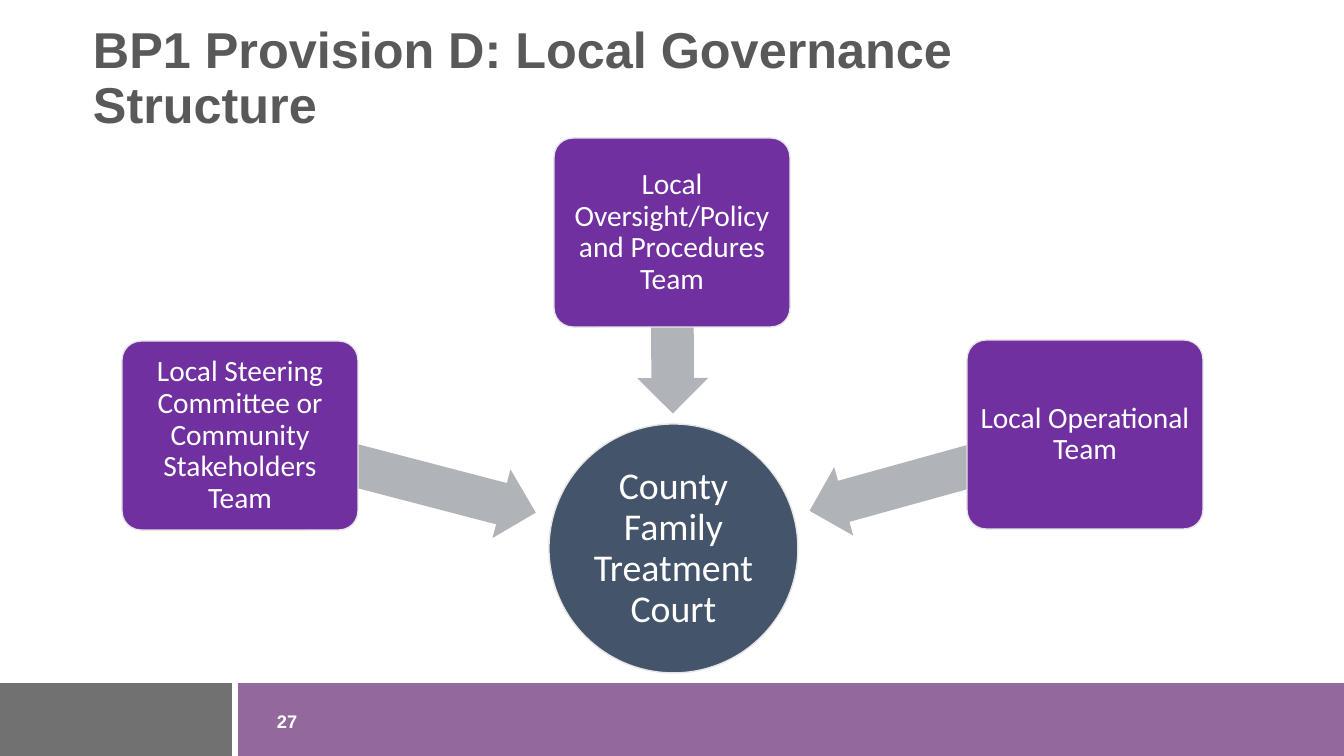
from math import atan2, cos, degrees, hypot, sin

from pptx import Presentation
from pptx.dml.color import RGBColor
from pptx.enum.shapes import MSO_CONNECTOR, MSO_SHAPE as SHAPE
from pptx.enum.text import MSO_ANCHOR as ANCHOR, MSO_AUTO_SIZE, PP_ALIGN as ALIGN
from pptx.oxml.ns import qn
from pptx.util import Emu, Pt
from lxml import etree

TITLE = "BP1 Provision D: Local Governance Structure"
PAGE = "27"
HUB = ("County Family Treatment Court", 549, 424, 249)
TEAMS = [
    ("Local Steering Committee or Community Stakeholders Team", 122, 341),
    ("Local Oversight/Policy and Procedures Team", 554, 138),
    ("Local Operational Team", 967, 340),
]
BOX_W, BOX_H, ARROW_H = 236, 189, 71
REACH = 0.945
SLIDE_W, SLIDE_H = 1344, 756
FOOTER_TOP, FOOTER_SPLIT = 683, 235
WHITE, GREY, EDGE = "FFFFFF", "595959", "E7E6E6"
PURPLE, NAVY, ARROW = "7030A0", "44546A", "B0B4B9"


def px(n):
    return Emu(round(n * 914400 / 100.8))


def rgb(color):
    return RGBColor.from_string(color)


def add_shape(slide, kind, x, y, w, h, fill, line=None, alpha=None):
    s = slide.shapes.add_shape(kind, px(x), px(y), px(w), px(h))
    s.shadow.inherit = False
    s.fill.solid()
    s.fill.fore_color.rgb = rgb(fill)
    if line:
        s.line.color.rgb = rgb(line)
        s.line.width = Pt(1)
    else:
        s.line.fill.background()
    if alpha:
        color = s.fill._xPr.find(".//" + qn("a:srgbClr"))
        etree.SubElement(color, qn("a:alpha"), val=str(alpha * 1000))
    return s


def write(s, text, size, font, color, bold=False, align=ALIGN.LEFT,
          anchor=ANCHOR.MIDDLE, inset=0):
    tf = s.text_frame
    tf.word_wrap = True
    tf.auto_size = MSO_AUTO_SIZE.NONE
    tf.vertical_anchor = anchor
    tf.margin_left = tf.margin_right = tf.margin_top = tf.margin_bottom = px(inset)
    tf.text = text
    p = tf.paragraphs[0]
    p.alignment = align
    p.line_spacing = 0.9
    p.font.size = Pt(size)
    p.font.name = font
    p.font.bold = bold
    p.font.color.rgb = rgb(color)


def add_footer(slide):
    height = SLIDE_H - FOOTER_TOP
    add_shape(slide, SHAPE.RECTANGLE, FOOTER_SPLIT, FOOTER_TOP,
              SLIDE_W - FOOTER_SPLIT, height, "4B055D", alpha=60)
    add_shape(slide, SHAPE.RECTANGLE, 0, FOOTER_TOP, FOOTER_SPLIT, height,
              "262626", alpha=65)
    number = slide.shapes.add_textbox(px(277), px(713), px(44), px(26))
    write(number, PAGE, 13, "Arial", WHITE, bold=True, anchor=ANCHOR.TOP)
    divider = slide.shapes.add_connector(
        MSO_CONNECTOR.STRAIGHT, px(FOOTER_SPLIT), px(FOOTER_TOP),
        px(FOOTER_SPLIT), px(SLIDE_H))
    divider.line.color.rgb = rgb(WHITE)
    divider.line.width = Pt(4)
    etree.SubElement(divider._element.spPr, qn("a:effectLst"))


def add_team(slide, text, x, y, hub_x, hub_y, radius):
    box_x, box_y = x + BOX_W / 2, y + BOX_H / 2
    dx, dy = box_x - hub_x, box_y - hub_y
    angle = atan2(dy, dx)
    length = REACH * (hypot(dx, dy) - radius)
    mid_x = box_x - cos(angle) * length / 2
    mid_y = box_y - sin(angle) * length / 2
    arrow = add_shape(slide, SHAPE.LEFT_ARROW, mid_x - length / 2,
                      mid_y - ARROW_H / 2, length, ARROW_H, ARROW)
    arrow.adjustments[0] = 0.6
    arrow.adjustments[1] = 0.5
    arrow.rotation = degrees(angle) % 360
    box = add_shape(slide, SHAPE.ROUNDED_RECTANGLE, x, y, BOX_W, BOX_H, PURPLE, EDGE)
    box.adjustments[0] = 0.1
    write(box, text, 21, "Calibri", WHITE, align=ALIGN.CENTER, inset=4)


def main():
    """Build the local governance structure slide."""
    prs = Presentation()
    prs.slide_width, prs.slide_height = px(SLIDE_W), px(SLIDE_H)
    slide = prs.slides.add_slide(prs.slide_layouts[5])
    add_footer(slide)

    title = slide.shapes.title
    title.left, title.top, title.width, title.height = px(93), px(52), px(1078), px(55)
    write(title, TITLE, 36, "Arial", GREY, bold=True)

    text, x, y, size = HUB
    hub = add_shape(slide, SHAPE.OVAL, x, y, size, size, NAVY, EDGE)
    write(hub, text, 27, "Calibri", WHITE, align=ALIGN.CENTER, inset=2)
    radius = size / 2
    for team, left, top in TEAMS:
        add_team(slide, team, left, top, x + radius, y + radius, radius)
    prs.save("out.pptx")


if __name__ == "__main__":
    main()
